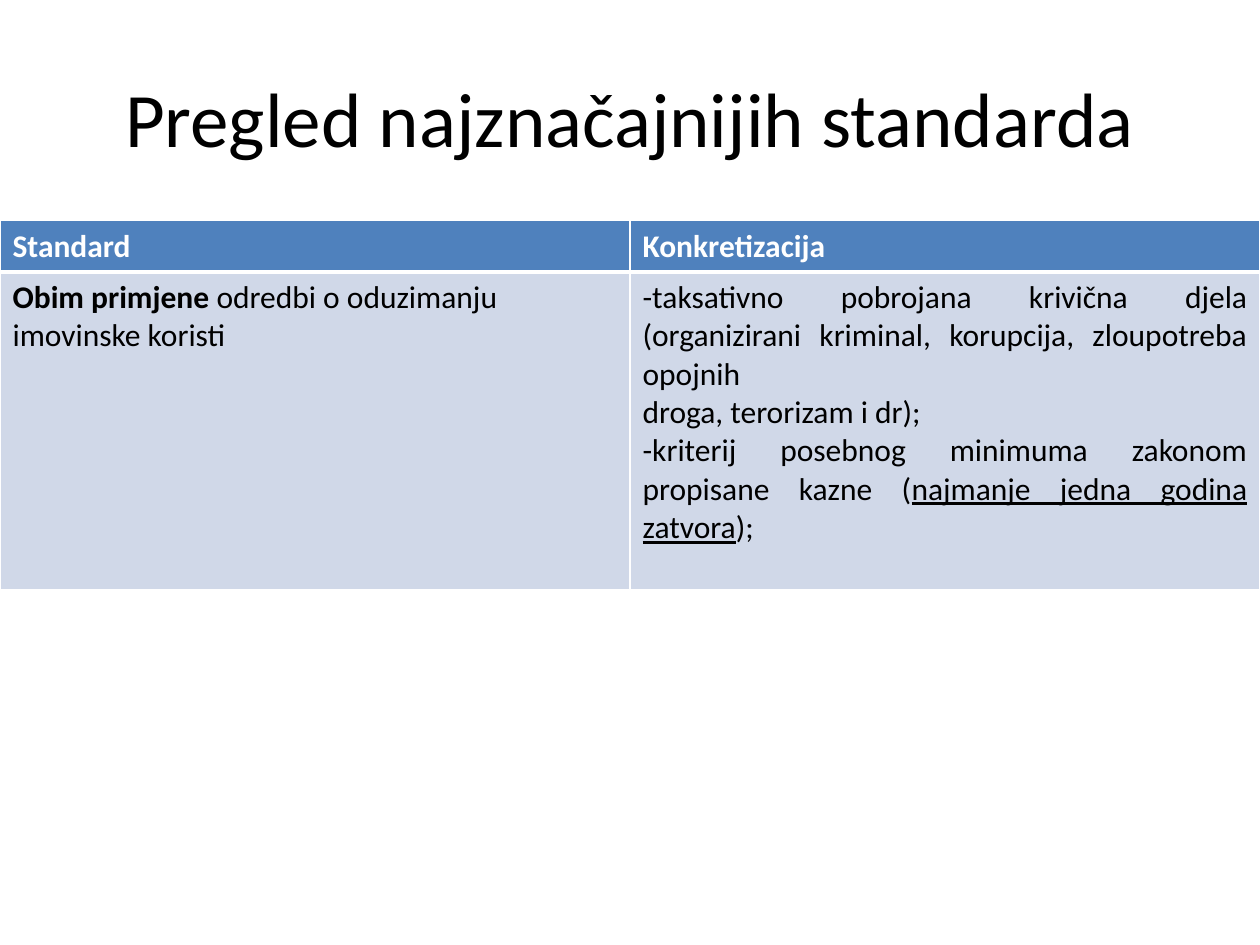
import pptx
import pptx.dml.color
import pptx.enum.text
import pptx.oxml
import pptx.oxml.ns
import pptx.util

Cm = pptx.util.Cm
Pt = pptx.util.Pt
ALIGN = pptx.enum.text.PP_ALIGN

COLORS = {
    "text": "000000",
    "header": "4F81BD",
    "body": "D0D8E8",
    "white": "FFFFFF",
}


def add_text(para, text, font="Calibri", size=18, color="text", bold=False, underline=False):
    """Append one formatted span to a paragraph."""
    span = para.add_run()
    span.text = text
    span.font.name = font
    span.font.size = Pt(size)
    span.font.bold = bold
    span.font.underline = underline
    span.font.color.rgb = pptx.dml.color.RGBColor.from_string(COLORS[color])


class SlideBuilder:
    """Holds the style and the current slide."""

    def __init__(self, slide, font="Calibri"):
        self.slide = slide
        self.font = font

    def fill_paragraphs(self, frame, paragraphs, align, **style):
        for index, spans in enumerate(paragraphs):
            para = frame.add_paragraph() if index else frame.paragraphs[0]
            para.alignment = align
            for text, extra in spans:
                add_text(para, text, font=self.font, **{**style, **extra})

    def title(self, text, left, top, width, height):
        box = self.slide.shapes.add_textbox(left, top, width, height)
        frame = box.text_frame
        frame.word_wrap = True
        frame.vertical_anchor = pptx.enum.text.MSO_ANCHOR.MIDDLE
        self.fill_paragraphs(frame, [[(text, {})]], ALIGN.CENTER, size=44)

    def borders(self, cell, top, bottom):
        properties = cell._tc.get_or_add_tcPr()
        widths = {"lnL": 1, "lnR": 1, "lnT": top, "lnB": bottom}
        for index, (side, width) in enumerate(widths.items()):
            line = pptx.oxml.parse_xml(
                f'<a:{side} {pptx.oxml.ns.nsdecls("a")} w="{Pt(width)}"><a:solidFill>'
                f'<a:srgbClr val="{COLORS["white"]}"/></a:solidFill></a:{side}>'
            )
            properties.insert(index, line)

    def cell(self, cell, paragraphs, fill, align=ALIGN.LEFT, top=1, bottom=1, **style):
        cell.fill.solid()
        cell.fill.fore_color.rgb = pptx.dml.color.RGBColor.from_string(COLORS[fill])
        self.borders(cell, top, bottom)
        self.fill_paragraphs(cell.text_frame, paragraphs, align, **style)

    def table(self, headings, contents, left, top, width, row_heights):
        frame = self.slide.shapes.add_table(
            2, len(headings), left, top, width, sum(row_heights)
        )
        table = frame.table
        for row, height in zip(table.rows, row_heights):
            row.height = height
        for column, heading in enumerate(headings):
            self.cell(table.cell(0, column), [[(heading, {})]], "header",
                      bottom=3, color="white", bold=True)
        for column, (paragraphs, align) in enumerate(contents):
            self.cell(table.cell(1, column), paragraphs, "body", align, top=3)


def main():
    deck = pptx.Presentation()
    deck.slide_width = Cm(25.4)
    deck.slide_height = Cm(19.05)
    page = SlideBuilder(deck.slides.add_slide(deck.slide_layouts[6]))

    # Title
    page.title("Pregled najznačajnijih standarda", Cm(1.27), Cm(0.76), Cm(22.86), Cm(3.18))

    # Table of standards
    scope = [[
        ("Obim primjene ", {"bold": True}),
        ("odredbi o oduzimanju imovinske koristi", {}),
    ]]
    details = [
        [("-taksativno pobrojana krivična djela (organizirani kriminal, "
          "korupcija, zloupotreba opojnih ", {})],
        [("droga, terorizam i dr);", {})],
        [("-kriterij posebnog minimuma zakonom propisane kazne (", {}),
         ("najmanje jedna godina zatvora", {"underline": True}),
         (");", {})],
    ]
    page.table(
        ["Standard", "Konkretizacija"],
        [(scope, ALIGN.LEFT), (details, ALIGN.JUSTIFY)],
        Cm(0), Cm(4.45), deck.slide_width, [Cm(1.03), Cm(6.4)],
    )

    deck.save("out.pptx")


if __name__ == "__main__":
    main()
